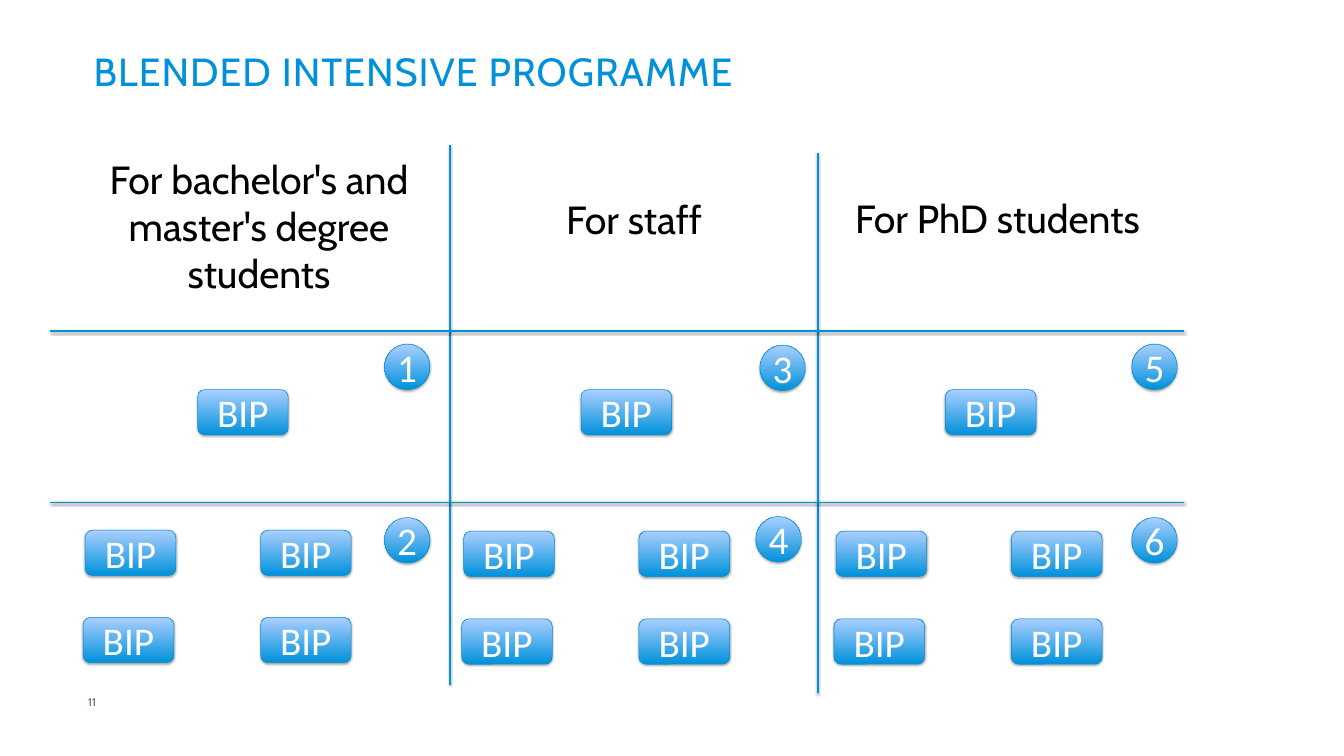
from lxml import etree
from pptx import Presentation
from pptx import util as u
from pptx.dml.color import RGBColor
from pptx.enum import shapes, text
from pptx.oxml import ns

PX = 9144  # EMU per px, 100 px to the inch
BLUE = RGBColor(0x00, 0x91, 0xDA)
EDGE = RGBColor(0x00, 0x8E, 0xD5)
LIGHT = RGBColor(0xAB, 0xCF, 0xFF)
WHITE = RGBColor(0xFF, 0xFF, 0xFF)
BLACK = RGBColor(0x00, 0x00, 0x00)
GREY = RGBColor(0x5B, 0x67, 0x70)

LEFT = text.PP_ALIGN.LEFT
MID = text.PP_ALIGN.CENTER
CHIP_W, CHIP_H = 180, 90
STEP = 348  # from one chip to the next in a row

HEADS = [
    ("For bachelor's and master's degree students", (169, 303, 690, 293), MID),
    ("For staff", (951, 382, 614, 104), MID),
    ("For PhD students", (1687, 381, 614, 104), LEFT),
]
RULES = [
    (893, 287, 893, 1359),
    (1623, 303, 1623, 1376),
    (100, 657, 2350, 657),
    (100, 997, 2350, 997),
]
# Per column: single chip x, group x, group rows y, badge places
COLUMNS = [
    (392, 169, (1052, 1225), ((763, 683), (763, 1027))),
    (1153, 920, (1054, 1228), ((1508, 685), (1500, 1025))),
    (1876, 1659, (1054, 1228), ((2246, 683), (2246, 1027))),
]


def emu(*px):
    return [u.Emu(n * PX) for n in px]


def write(shape, words, size=56, font="Cabin", color=BLACK, align=LEFT,
          anchor=text.MSO_ANCHOR.TOP, fit=text.MSO_AUTO_SIZE.NONE, track=0):
    frame = shape.text_frame
    frame.word_wrap = True
    frame.auto_size = fit
    frame.vertical_anchor = anchor
    para = frame.paragraphs[0]
    para.alignment = align
    run = para.add_run()
    run.text = words
    run.font.size = u.Pt(size)
    run.font.name = font
    run.font.color.rgb = color
    if track:
        run.font._element.set("spc", str(track))


def shade(shape, dist, alpha):
    """Add a soft black shadow straight below the shape."""
    props = shape._element.spPr
    effects = etree.SubElement(props, ns.qn("a:effectLst"))
    outer = etree.SubElement(effects, ns.qn("a:outerShdw"), blurRad="40000",
                             dist=str(dist), dir="5400000", rotWithShape="0")
    black = etree.SubElement(outer, ns.qn("a:srgbClr"), val="000000")
    etree.SubElement(black, ns.qn("a:alpha"), val=str(alpha * 1000))


def add_text(slide, box, words, **style):
    write(slide.shapes.add_textbox(*emu(*box)), words, **style)


def add_rule(slide, ends):
    rule = slide.shapes.add_connector(shapes.MSO_CONNECTOR.STRAIGHT, *emu(*ends))
    rule.line.color.rgb = BLUE
    rule.line.width = u.Pt(2)
    shade(rule, 20000, 38)


def add_button(slide, kind, box, words):
    """Add a glossy gradient shape with a white label."""
    shape = slide.shapes.add_shape(kind, *emu(*box))
    shape.fill.gradient()
    shape.fill.gradient_angle = 90
    for stop, color in zip(shape.fill.gradient_stops, (BLUE, LIGHT)):
        stop.color.rgb = color
    shape.line.color.rgb = EDGE
    shape.line.width = u.Pt(0.75)
    shade(shape, 23000, 35)
    write(shape, words, font="Calibri", color=WHITE, align=MID,
          anchor=text.MSO_ANCHOR.MIDDLE)


def add_chip(slide, x, y):
    add_button(slide, shapes.MSO_SHAPE.ROUNDED_RECTANGLE,
               (x, y, CHIP_W, CHIP_H), "BIP")


def add_badge(slide, x, y, number):
    add_button(slide, shapes.MSO_SHAPE.OVAL, (x, y, CHIP_H, CHIP_H), str(number))


def add_title(slide, box, words):
    title = slide.shapes.title
    title.left, title.top, title.width, title.height = emu(*box)
    write(title, words, color=BLUE, track=150)


def main():
    deck = Presentation()
    deck.slide_width, deck.slide_height = emu(2667, 1500)
    slide = deck.slides.add_slide(deck.slide_layouts[5])

    add_title(slide, (176, 89, 2306, 94), "BLENDED INTENSIVE PROGRAMME")
    add_text(slide, (165, 1359, 79, 69), "11", size=16, color=GREY,
             anchor=text.MSO_ANCHOR.MIDDLE)
    for words, box, align in HEADS:
        add_text(slide, box, words, align=align,
                 fit=text.MSO_AUTO_SIZE.SHAPE_TO_FIT_TEXT)
    for ends in RULES:
        add_rule(slide, ends)

    for col, (single, group, (upper, lower), badges) in enumerate(COLUMNS):
        for row, (x, y) in enumerate(badges):
            add_badge(slide, x, y, 2 * col + row + 1)
        add_chip(slide, single, 773)
        add_chip(slide, group, upper)
        add_chip(slide, group - 4, lower)
        for y in (upper, lower):
            add_chip(slide, group + STEP, y)

    deck.save("out.pptx")


if __name__ == "__main__":
    main()
